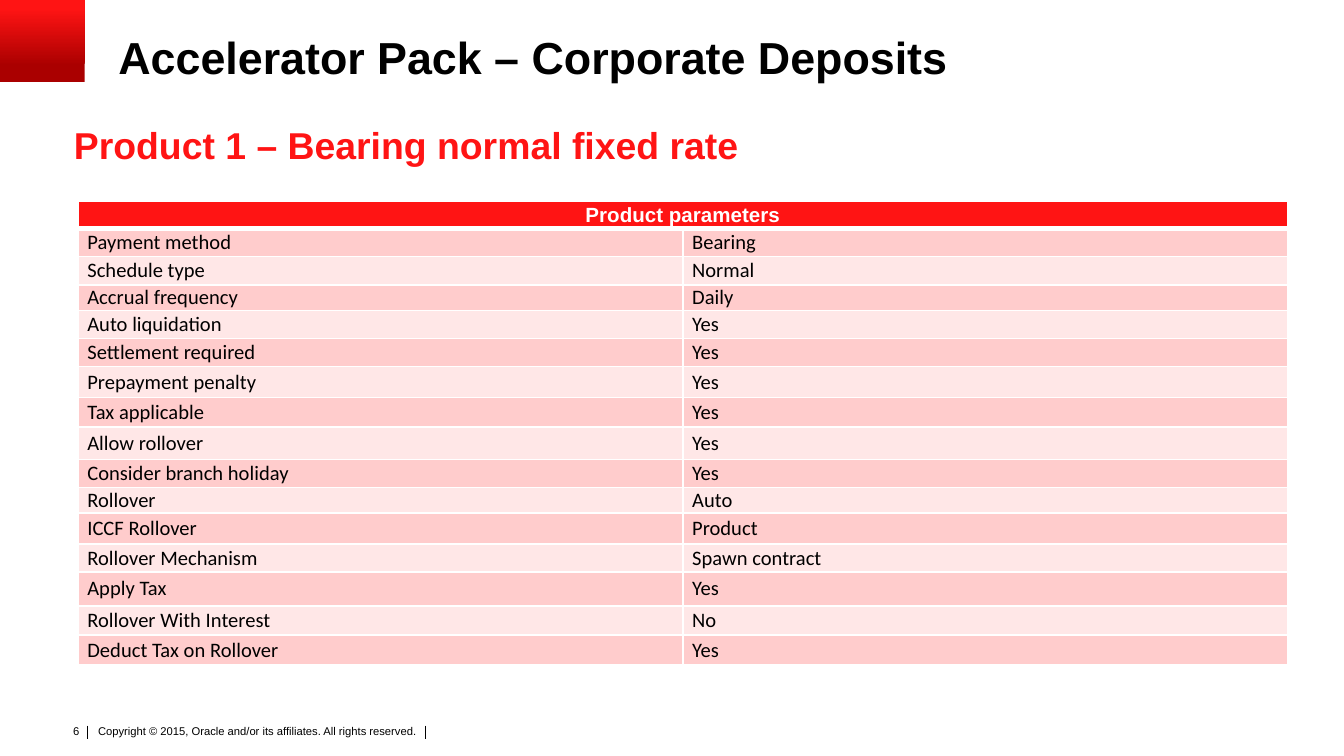
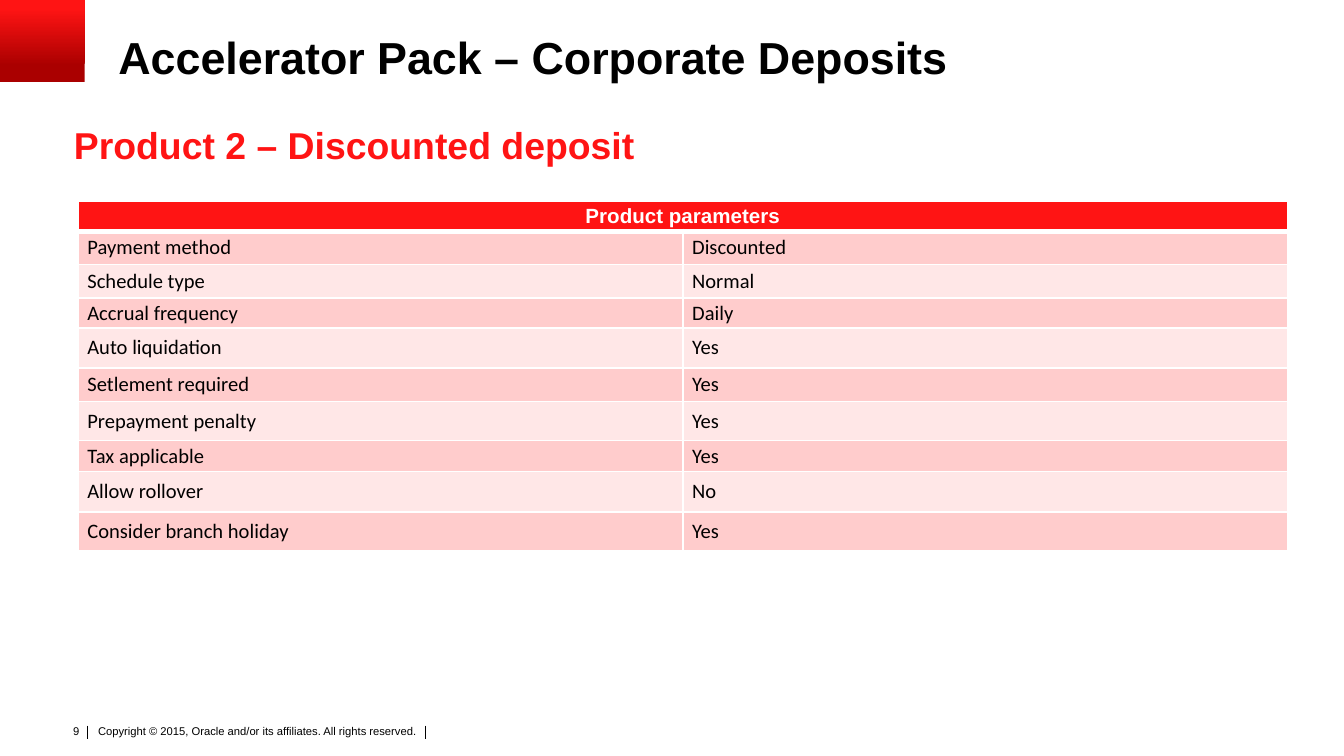
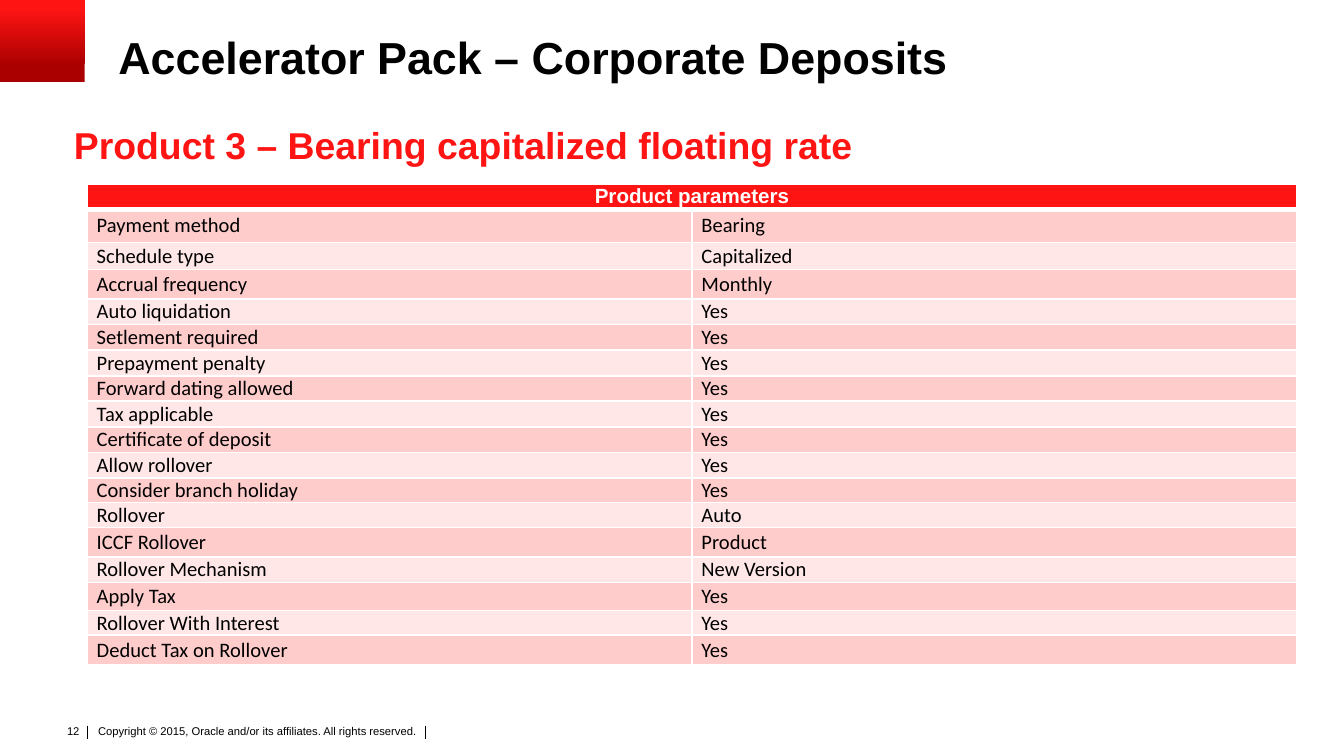
from lxml import etree
from pptx import Presentation
from pptx import util as u
from pptx.dml.color import RGBColor
from pptx.enum import shapes, text
from pptx.oxml import ns

Pt = u.Pt
BLACK, WHITE, RED, DARK_RED = "000000", "FFFFFF", "FF1414", "AA0000"
BANDS = "FFCCCC", "FFE7E7"

PRODUCTS = [
    (6, "Product 1 – Bearing normal fixed rate", (41.8, 108), 14.4, [
        ("Payment method", "Bearing", 15.1),
        ("Schedule type", "Normal", 15.1),
        ("Accrual frequency", "Daily", 13.7),
        ("Auto liquidation", "Yes", 15.1),
        ("Settlement required", "Yes", 15.1),
        ("Prepayment penalty", "Yes", 16.6),
        ("Tax applicable", "Yes", 15.8),
        ("Allow rollover", "Yes", 17.3),
        ("Consider branch holiday", "Yes", 15.1),
        ("Rollover", "Auto", 13.7),
        ("ICCF Rollover", "Product", 16.6),
        ("Rollover Mechanism", "Spawn contract", 15.1),
        ("Apply Tax", "Yes", 18),
        ("Rollover With Interest", "No", 15.8),
        ("Deduct Tax on Rollover", "Yes", 15.8),
    ]),
    (9, "Product 2 – Discounted deposit", (41.8, 108), 15.8, [
        ("Payment method", "Discounted", 18),
        ("Schedule type", "Normal", 18),
        ("Accrual frequency", "Daily", 15.8),
        ("Auto liquidation", "Yes", 21.6),
        ("Setlement required", "Yes", 18),
        ("Prepayment penalty", "Yes", 20.9),
        ("Tax applicable", "Yes", 16.6),
        ("Allow rollover", "No", 21.6),
        ("Consider branch holiday", "Yes", 20.9),
    ]),
    (12, "Product 3 – Bearing capitalized floating rate", (46.8, 98.8), 13, [
        ("Payment method", "Bearing", 18),
        ("Schedule type", "Capitalized", 14.4),
        ("Accrual frequency", "Monthly", 15.8),
        ("Auto liquidation", "Yes", 13.7),
        ("Setlement required", "Yes", 13.7),
        ("Prepayment penalty", "Yes", 13.7),
        ("Forward dating allowed", "Yes", 13.7),
        ("Tax applicable", "Yes", 13.7),
        ("Certificate of deposit", "Yes", 13.7),
        ("Allow rollover", "Yes", 13.7),
        ("Consider branch holiday", "Yes", 13),
        ("Rollover", "Auto", 13),
        ("ICCF Rollover", "Product", 15.8),
        ("Rollover Mechanism", "New Version", 13.7),
        ("Apply Tax", "Yes", 15.1),
        ("Rollover With Interest", "Yes", 13),
        ("Deduct Tax on Rollover", "Yes", 15.8),
    ]),
]


def colour(value):
    return RGBColor.from_string(value)


class Deck:
    """Holds the shared style and the slide being built."""

    def __init__(self):
        self.show = Presentation()
        self.show.slide_width, self.show.slide_height = Pt(720), Pt(405)

    def new_slide(self, number):
        self.slide = self.show.slides.add_slide(self.show.slide_layouts[6])
        self.text("Copyright © 2015, Oracle and/or its affiliates. All rights reserved.",
                  (49.7, 386.6, 197.3, 17.3), 6, insets=(2.9, 1.4))
        for x in (46.8, 228):
            self.divider(x, 388.8, 396)
        folio = self.text(str(number), (28.1, 384.5, 21.6, 14.4), 6, insets=(7.2, 3.6))
        folio.word_wrap = False
        folio.auto_size = text.MSO_AUTO_SIZE.SHAPE_TO_FIT_TEXT
        folio.paragraphs[0].alignment = text.PP_ALIGN.RIGHT
        self.corner()
        title = self.text("Accelerator Pack – Corporate Deposits",
                          (63.4, 19.4, 648, 31.7), 24, bold=True)
        title.paragraphs[0].line_spacing = 0.9

    def style(self, paragraph, size, ink=BLACK, bold=False, face="Arial"):
        for run in paragraph.runs:
            run.font.size, run.font.name, run.font.bold = Pt(size), face, bold
            run.font.color.rgb = colour(ink)

    def text(self, words, box, size, ink=BLACK, bold=False, insets=(0, 0)):
        frame = self.slide.shapes.add_textbox(*map(Pt, box)).text_frame
        frame.word_wrap = True
        frame.margin_left = frame.margin_right = Pt(insets[0])
        frame.margin_top = frame.margin_bottom = Pt(insets[1])
        frame.text = words
        self.style(frame.paragraphs[0], size, ink, bold)
        return frame

    def divider(self, x, top, bottom):
        rule = self.slide.shapes.add_connector(
            shapes.MSO_CONNECTOR.STRAIGHT, Pt(x), Pt(top), Pt(x), Pt(bottom))
        rule.line.color.rgb = colour(BLACK)
        rule.line.width = Pt(0.5)
        etree.SubElement(rule.element.spPr, ns.qn("a:effectLst"))

    def corner(self):
        block = self.slide.shapes.add_shape(
            shapes.MSO_SHAPE.RECTANGLE, 0, 0, Pt(45.4), Pt(43.9))
        block.shadow.inherit = False
        block.line.fill.background()
        block.fill.gradient()
        block.fill.gradient_angle = 90
        stops = (0.2, DARK_RED), (0.9, RED)
        for stop, (position, shade) in zip(block.fill.gradient_stops, stops):
            stop.position = position
            stop.color.rgb = colour(shade)

    def cell(self, cell, words, fill, borders, **font):
        cell.margin_left = cell.margin_right = Pt(5)
        cell.margin_top = cell.margin_bottom = 0
        cell.vertical_anchor = text.MSO_ANCHOR.MIDDLE
        properties = cell._tc.get_or_add_tcPr()
        for side, width in borders.items():
            edge = etree.SubElement(properties, ns.qn(f"a:ln{side}"), w=str(Pt(width)))
            solid = etree.SubElement(edge, ns.qn("a:solidFill"))
            etree.SubElement(solid, ns.qn("a:srgbClr"), val=WHITE)
        cell.fill.solid()
        cell.fill.fore_color.rgb = colour(fill)
        cell.text_frame.text = words
        paragraph = cell.text_frame.paragraphs[0]
        paragraph.space_after = Pt(10)
        self.style(paragraph, 11, **font)
        return paragraph

    def parameters(self, corner, header_height, rows):
        heights = [header_height] + [height for *_, height in rows]
        grid = self.slide.shapes.add_table(
            len(heights), 2, *map(Pt, corner), Pt(648), Pt(sum(heights))).table
        for row, height in zip(grid.rows, heights):
            row.height = Pt(height)
        grid.cell(0, 0).merge(grid.cell(0, 1))
        for column, words in enumerate(("Product parameters", "")):
            heading = self.cell(grid.cell(0, column), words, RED,
                                {"L": 1, "R": 1, "T": 1, "B": 3}, ink=WHITE, bold=True)
            heading.alignment = text.PP_ALIGN.CENTER
        for index, (*pair, _) in enumerate(rows):
            for column, words in enumerate(pair):
                self.cell(grid.cell(index + 1, column), words, BANDS[index % 2],
                          {"L": 1, "R": 1, "B": 1}, face="Calibri")

    def subtitle(self, words):
        frame = self.text(words, (39.6, 65.5, 648, 23.8), 20, RED, True)
        frame.vertical_anchor = text.MSO_ANCHOR.BOTTOM


def main():
    deck = Deck()
    for number, product, corner, header_height, rows in PRODUCTS:
        deck.new_slide(number)
        deck.parameters(corner, header_height, rows)
        deck.subtitle(product)
    deck.show.save("out.pptx")


if __name__ == "__main__":
    main()
